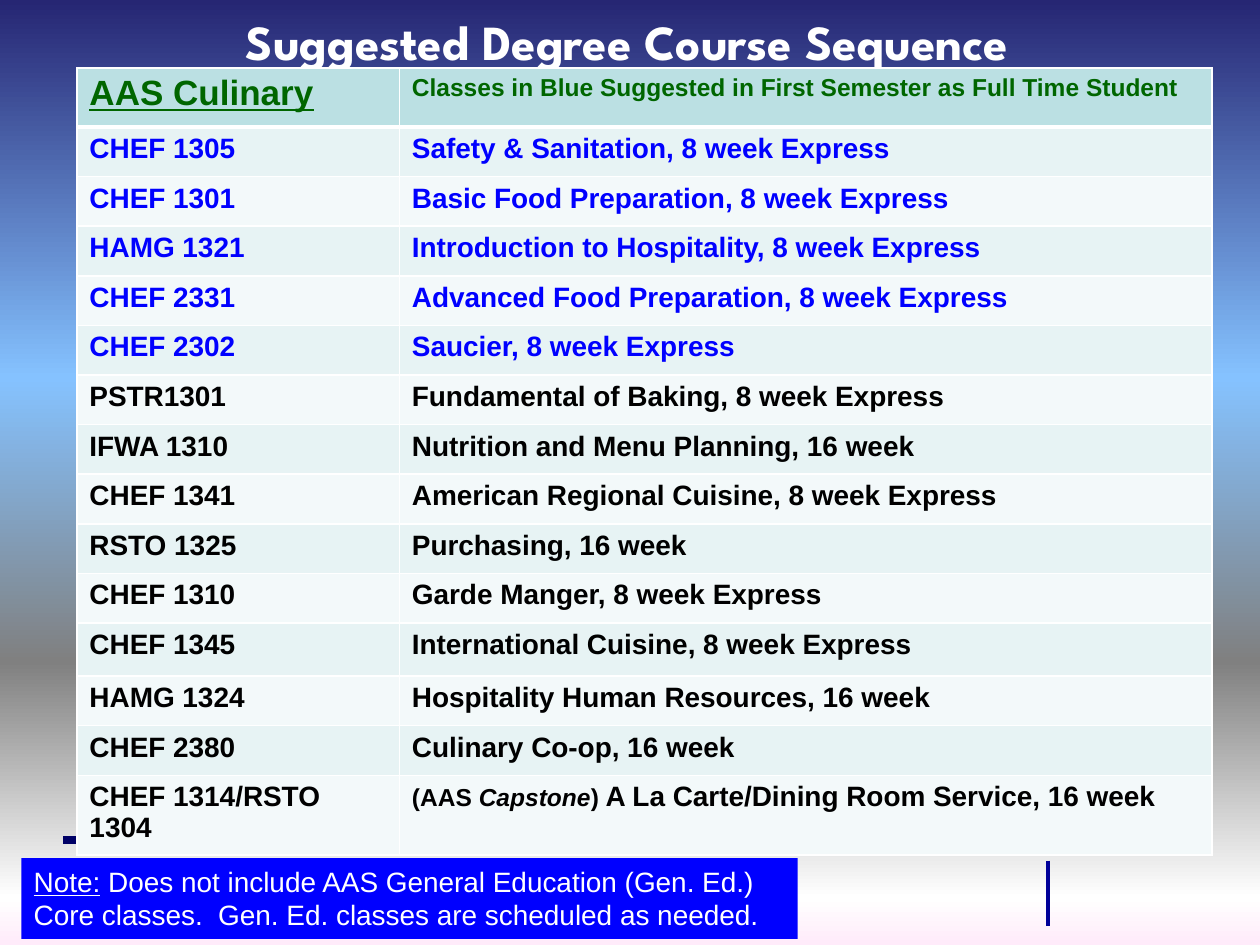
from lxml.etree import SubElement
from pptx import Presentation
from pptx.dml.color import RGBColor
from pptx.enum.shapes import MSO_CONNECTOR as CONNECTOR, MSO_SHAPE as SHAPE
from pptx.enum.text import MSO_ANCHOR as ANCHOR, PP_ALIGN as ALIGN
from pptx.oxml.ns import qn
from pptx.util import Cm, Pt

BLUE, BLACK, GREEN, WHITE = "0000FF", "000000", "006600", "FFFFFF"
HEADER_FILL, BAND_FILLS = "BBE0E3", ("E7F3F4", "F3F9FA")
SKY = [(0, "262673"), (40, "85C2FF"), (70, "808080"), (95, "FFFFFF"), (100, "FFEBFA")]

SUGGESTED = [
    ("CHEF 1305 ", "Safety & Sanitation, 8 week Express"),
    ("CHEF 1301", "Basic Food Preparation, 8 week Express"),
    ("HAMG 1321", "Introduction to Hospitality, 8 week Express"),
    ("CHEF 2331", "Advanced Food Preparation, 8 week Express"),
    ("CHEF 2302", "Saucier, 8 week Express"),
]
LATER = [
    ("PSTR1301", "Fundamental of Baking, 8 week Express"),
    ("IFWA 1310", "Nutrition and Menu Planning, 16 week"),
    ("CHEF 1341", "American Regional Cuisine, 8 week Express"),
    ("RSTO 1325", "Purchasing, 16 week"),
    ("CHEF 1310", "Garde Manger, 8 week Express"),
    ("CHEF 1345", "International Cuisine, 8 week Express"),
    ("HAMG 1324", "Hospitality Human Resources, 16 week"),
    ("CHEF 2380", "Culinary Co-op, 16 week"),
]


def color(value):
    return RGBColor.from_string(value)


def add_run(paragraph, text, size, ink, font="Arial", bold=False, italic=False, underline=False):
    run = paragraph.add_run()
    run.text = text
    run.font.name = font
    run.font.size = Pt(size)
    run.font.color.rgb = color(ink)
    run.font.bold = bold
    run.font.italic = italic
    run.font.underline = underline


def paint_sky(slide):
    fill = slide.background.fill
    fill.gradient()
    fill.gradient_angle = 270
    stops = next(slide.element.iter(qn("a:gsLst")))
    for stop in list(stops):
        stops.remove(stop)
    for percent, value in SKY:
        stop = SubElement(stops, qn("a:gs"), pos=str(percent * 1000))
        SubElement(stop, qn("a:srgbClr"), val=value)


def add_rule(slide, left, top, width, height, ink, weight):
    rule = slide.shapes.add_connector(
        CONNECTOR.STRAIGHT, Cm(left), Cm(top), Cm(left + width), Cm(top + height))
    rule.line.color.rgb = color(ink)
    rule.line.width = Pt(weight)
    SubElement(rule._element.spPr, qn("a:effectLst"))


def add_title(slide, left, top, width, height):
    title = slide.shapes.add_textbox(Cm(left), Cm(top), Cm(width), Cm(height))
    frame = title.text_frame
    frame.word_wrap = True
    frame.vertical_anchor = ANCHOR.MIDDLE
    frame.paragraphs[0].alignment = ALIGN.CENTER
    add_run(frame.paragraphs[0], "Suggested Degree Course Sequence", 28, WHITE,
            font="League Spartan", bold=True)


def add_note(slide, left, top, width, height):
    note = slide.shapes.add_shape(SHAPE.RECTANGLE, Cm(left), Cm(top), Cm(width), Cm(height))
    note.shadow.inherit = False
    note.fill.solid()
    note.fill.fore_color.rgb = color(BLUE)
    note.line.fill.background()
    frame = note.text_frame
    frame.word_wrap = True
    frame.vertical_anchor = ANCHOR.TOP
    first, second = frame.paragraphs[0], frame.add_paragraph()
    first.alignment = second.alignment = ALIGN.LEFT
    add_run(first, "Note:", 16, WHITE, underline=True)
    add_run(first, " Does not include AAS General Education (Gen. Ed.)", 16, WHITE)
    add_run(second, "Core classes.  Gen. Ed. classes are scheduled as needed.", 16, WHITE)


def style_cell(cell, fill, bottom_weight=1):
    properties = cell._tc.get_or_add_tcPr()
    for side, weight in (("L", 1), ("R", 1), ("T", 1), ("B", bottom_weight)):
        border = SubElement(properties, qn(f"a:ln{side}"), w=str(Pt(weight)))
        SubElement(SubElement(border, qn("a:solidFill")), qn("a:srgbClr"), val=WHITE)
    cell.fill.solid()
    cell.fill.fore_color.rgb = color(fill)


def add_courses(slide, left, top, widths, heights):
    courses = slide.shapes.add_table(
        len(heights), len(widths), Cm(left), Cm(top), Cm(sum(widths)), Cm(sum(heights))).table
    for column, width in zip(courses.columns, widths):
        column.width = Cm(width)
    for row, height in zip(courses.rows, heights):
        row.height = Cm(height)

    rows = [[[("AAS Culinary", 20, GREEN, {"underline": True})],
             [("Classes in Blue Suggested in First Semester as Full Time Student", 14, GREEN, {})]]]
    for group, ink in ((SUGGESTED, BLUE), (LATER, BLACK)):
        rows += [[[(text, 16, ink, {})] for text in course] for course in group]
    rows.append([[("CHEF 1314/RSTO 1304 ", 16, BLACK, {})],
                 [("(AAS ", 14, BLACK, {}),
                  ("Capstone", 14, BLACK, {"italic": True}),
                  (")", 14, BLACK, {}),
                  (" A La Carte/Dining Room Service, 16 week", 16, BLACK, {})]])

    for r, row in enumerate(rows):
        for c, runs in enumerate(row):
            cell = courses.cell(r, c)
            if r == 0:
                style_cell(cell, HEADER_FILL, bottom_weight=3)
            else:
                style_cell(cell, BAND_FILLS[(r - 1) % 2])
            for text, size, ink, emphasis in runs:
                add_run(cell.text_frame.paragraphs[0], text, size, ink, bold=True, **emphasis)


def main():
    deck = Presentation()
    deck.slide_width, deck.slide_height = Cm(25.4), Cm(19.05)
    slide = deck.slides.add_slide(deck.slide_layouts[6])
    paint_sky(slide)
    add_rule(slide, 1.27, 16.94, 22.86, 0, "000066", 4.5)
    add_rule(slide, 21.13, 17.35, 0, 1.32, "000099", 2.25)
    add_title(slide, 1.14, 0.23, 22.99, 1.19)
    add_note(slide, 0.43, 17.3, 15.65, 1.63)
    add_courses(slide, 1.55, 1.37, (6.5, 16.38), [1.19] + [1] * 10 + [1.07] + [1] * 3)
    deck.save("out.pptx")


if __name__ == "__main__":
    main()
